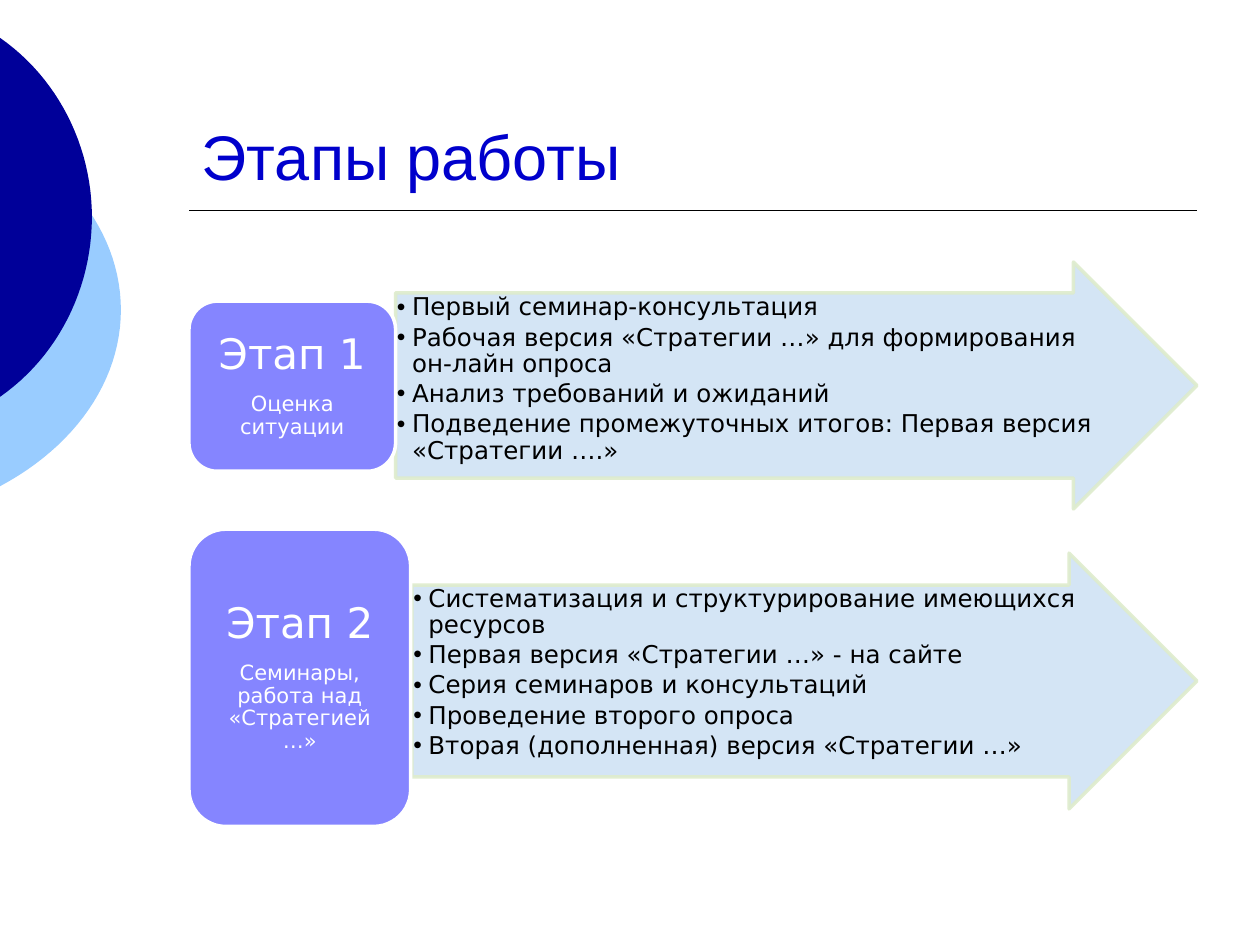
import pptx
import pptx.util
import pptx.dml.color
import pptx.enum.shapes
import pptx.enum.text
import pptx.oxml.ns
import lxml.etree

Inches = pptx.util.Inches
Pt = pptx.util.Pt
kind = pptx.enum.shapes.MSO_SHAPE
anchor = pptx.enum.text.MSO_ANCHOR
align = pptx.enum.text.PP_ALIGN
qn = pptx.oxml.ns.qn


def rgb(code):
    return pptx.dml.color.RGBColor.from_string(code)


def style(item, form):
    for name, value in form.items():
        setattr(item, name, value)


deck = pptx.Presentation()
style(deck, {"slide_width": Inches(10), "slide_height": Inches(7.5)})
slide = deck.slides.add_slide(deck.slide_layouts[3])
shapes = slide.shapes
title, *lists = slide.placeholders

moons = [
    ("99CCFF", [(0, 1.06), (0.6, 1.38), (0.96, 1.9), (0.96, 2.46),
                (0.96, 3.02), (0.6, 3.54), (0, 3.86)]),
    ("000099", [(0, 0.3), (0.46, 0.62), (0.73, 1.16), (0.73, 1.72),
                (0.73, 2.29), (0.46, 2.83), (0, 3.15)]),
]
steps = 24
for color, knots in moons:
    dots = []
    for start in (0, 3):
        a, b, c, d = knots[start:start + 4]
        for n in range(steps + 1):
            t = n / steps
            u = 1 - t
            dots.append([
                Inches(u**3 * a[i] + 3 * u * u * t * b[i]
                       + 3 * u * t * t * c[i] + t**3 * d[i])
                for i in (0, 1)
            ])
    pen = shapes.build_freeform(*dots[0])
    pen.add_line_segments(dots[1:], close=True)
    moon = pen.convert_to_shape()
    moon.shadow.inherit = False
    moon.fill.solid()
    moon.fill.fore_color.rgb = rgb(color)
    moon.line.fill.background()

rule = shapes.add_connector(pptx.enum.shapes.MSO_CONNECTOR.STRAIGHT,
                            Inches(1.5), Inches(1.67), Inches(9.5), Inches(1.67))
rule.line.color.rgb = rgb("000000")
rule.line.width = Pt(1)
lxml.etree.SubElement(rule.element.spPr, qn("a:effectLst"))

style(title, {"left": Inches(1.5), "top": Inches(0.33),
              "width": Inches(8), "height": Inches(1.25)})
title.text = "Этапы работы"
style(title.text_frame, {"vertical_anchor": anchor.BOTTOM, "auto_size": pptx.enum.text.MSO_AUTO_SIZE.NONE})
head = title.text_frame.paragraphs[0]
head.alignment = align.LEFT
style(head.font, {"size": Pt(36), "name": "Arial"})
head.font.color.rgb = rgb("0000CC")

stages = [
    {"name": "Этап 1", "note": "Оценка ситуации",
     "box": (1.5, 2.39, 1.64, 1.35), "arrow": (3.14, 2.08, 6.36, 1.96),
     "list": (3.14, 2.33, 5.63, 1.47),
     "lines": ["Первый семинар-консультация",
               "Рабочая версия «Стратегии …» для формирования он-лайн опроса",
               "Анализ требований и ожиданий",
               "Подведение промежуточных итогов: Первая версия «Стратегии ….»"]},
    {"name": "Этап 2", "note": "Семинары, работа над «Стратегией …»",
     "box": (1.5, 4.2, 1.76, 2.36), "arrow": (3.27, 4.39, 6.23, 2.03),
     "list": (3.27, 4.64, 5.47, 1.52),
     "lines": ["Систематизация и структурирование имеющихся ресурсов",
               "Первая версия «Стратегии …» - на сайте",
               "Серия семинаров и консультаций",
               "Проведение второго опроса",
               "Вторая (дополненная) версия «Стратегии …»"]},
]
sides = ("margin_left", "margin_right", "margin_top", "margin_bottom")

for stage, body in zip(stages, lists):
    arrow = shapes.add_shape(kind.RIGHT_ARROW, *map(Inches, stage["arrow"]))
    arrow.adjustments[0] = 0.75
    box = shapes.add_shape(kind.ROUNDED_RECTANGLE, *map(Inches, stage["box"]))
    for shape, fill, edge in ((arrow, "D0E3F5", "DEECCC"), (box, "8585FF", "FFFFFF")):
        shape.shadow.inherit = False
        shape.fill.solid()
        shape.fill.fore_color.rgb = rgb(fill)
        shape.line.color.rgb = rgb(edge)
        shape.line.width = Pt(2)
    for tint in arrow.element.spPr.iter(qn("a:srgbClr")):
        lxml.etree.SubElement(tint, qn("a:alpha"), val="90000")

    frame = box.text_frame
    style(frame, {"word_wrap": True, "vertical_anchor": anchor.MIDDLE})
    frame.text = stage["name"] + "\n" + stage["note"]
    for para, size in zip(frame.paragraphs, (24, 12)):
        style(para, {"alignment": align.CENTER, "line_spacing": 0.9,
                     "space_after": Pt(size * 0.35)})
        style(para.font, {"size": Pt(size), "name": "DejaVu Sans"})
        para.font.color.rgb = rgb("FFFFFF")

    shapes.element.append(body.element)
    style(body, dict(zip(("left", "top", "width", "height"), map(Inches, stage["list"]))))
    frame = body.text_frame
    style(frame, {"word_wrap": True, "vertical_anchor": anchor.TOP,
                  "auto_size": pptx.enum.text.MSO_AUTO_SIZE.NONE})
    style(frame, dict.fromkeys(sides, Inches(0.01)))
    frame.text = "\n".join(stage["lines"])
    for para in frame.paragraphs:
        style(para, {"level": 1, "line_spacing": 0.9,
                     "space_before": Pt(0), "space_after": Pt(2.1)})
        style(para.font, {"size": Pt(14), "name": "DejaVu Sans"})
        para.font.color.rgb = rgb("000000")
        props = para._p.get_or_add_pPr()
        props.set("marL", str(Inches(0.12)))
        props.set("indent", str(Inches(-0.12)))
        mark = lxml.etree.Element(qn("a:buChar"), char="•")
        props.insert(3, mark)

deck.save("out.pptx")
